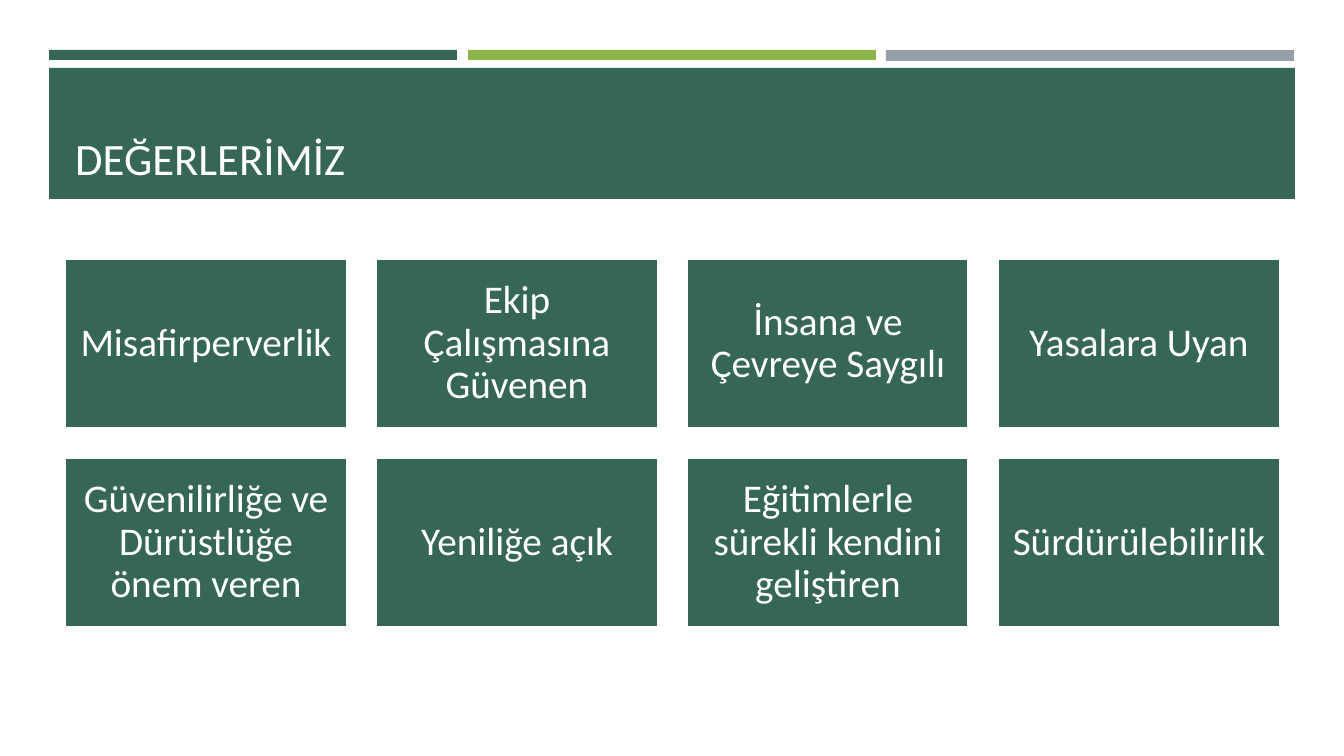
from pptx import Presentation
from pptx.dml.color import RGBColor
from pptx.enum.shapes import MSO_SHAPE
from pptx.enum.text import MSO_ANCHOR, MSO_AUTO_SIZE, PP_ALIGN
from pptx.util import Pt

EMU_PER_PX = 12192000 / 1344
COLORS = {"green": "366658", "lime": "8CB64A", "gray": "969FA7", "white": "FFFFFF"}


def px(length):
    return round(length * EMU_PER_PX)


def add_box(left, top, width, height, color):
    shape = slide.shapes.add_shape(
        MSO_SHAPE.RECTANGLE, px(left), px(top), px(width), px(height))
    shape.shadow.inherit = False
    shape.fill.solid()
    shape.fill.fore_color.rgb = RGBColor.from_string(COLORS[color])
    shape.line.fill.background()
    return shape


presentation = Presentation()
presentation.slide_width = px(1344)
presentation.slide_height = px(756)
slide = presentation.slides.add_slide(presentation.slide_layouts[5])
white = RGBColor.from_string(COLORS["white"])

# Accent bars and title banner
for left, height, color in [(49, 10, "green"), (468, 10, "lime"), (886, 11, "gray")]:
    add_box(left, 50, 408, height, color)
add_box(49, 68, 1246, 131, "green")

# Title, brought in front of the banner
title = slide.shapes.title
title_place = {"left": 65, "top": 78, "width": 1216, "height": 112}
for name, value in title_place.items():
    setattr(title, name, px(value))
title.element.getparent().append(title.element)
title_frame = title.text_frame
title_frame.text = "DEĞERLERİMİZ"
title_format = {"vertical_anchor": MSO_ANCHOR.BOTTOM,
                "auto_size": MSO_AUTO_SIZE.NONE, "word_wrap": True}
for name, value in title_format.items():
    setattr(title_frame, name, value)
title_paragraph = title_frame.paragraphs[0]
title_paragraph.alignment = PP_ALIGN.LEFT
title_font = title_paragraph.runs[0].font
for name, value in {"name": "Calibri", "size": Pt(32)}.items():
    setattr(title_font, name, value)
title_font.color.rgb = white

# Value cards in a grid of four columns
VALUES = [
    "Misafirperverlik", "Ekip Çalışmasına Güvenen",
    "İnsana ve Çevreye Saygılı", "Yasalara Uyan",
    "Güvenilirliğe ve Dürüstlüğe önem veren", "Yeniliğe açık",
    "Eğitimlerle sürekli kendini geliştiren", "Sürdürülebilirlik",
]
card_format = {
    "margin_left": px(12), "margin_right": px(12),
    "margin_top": px(12), "margin_bottom": px(12),
    "vertical_anchor": MSO_ANCHOR.MIDDLE, "word_wrap": True,
}
for index, value_text in enumerate(VALUES):
    row, column = divmod(index, 4)
    card = add_box(65 + column * 311, 259 + row * 199, 282, 169, "green")
    card.line.color.rgb = white
    card.line.width = Pt(2)
    card_frame = card.text_frame
    card_frame.text = value_text
    for name, value in card_format.items():
        setattr(card_frame, name, value)
    paragraph = card_frame.paragraphs[0]
    for name, value in {"alignment": PP_ALIGN.CENTER, "line_spacing": 0.9}.items():
        setattr(paragraph, name, value)
    font = paragraph.runs[0].font
    for name, value in {"name": "Calibri", "size": Pt(28)}.items():
        setattr(font, name, value)
    font.color.rgb = white

presentation.save("out.pptx")
